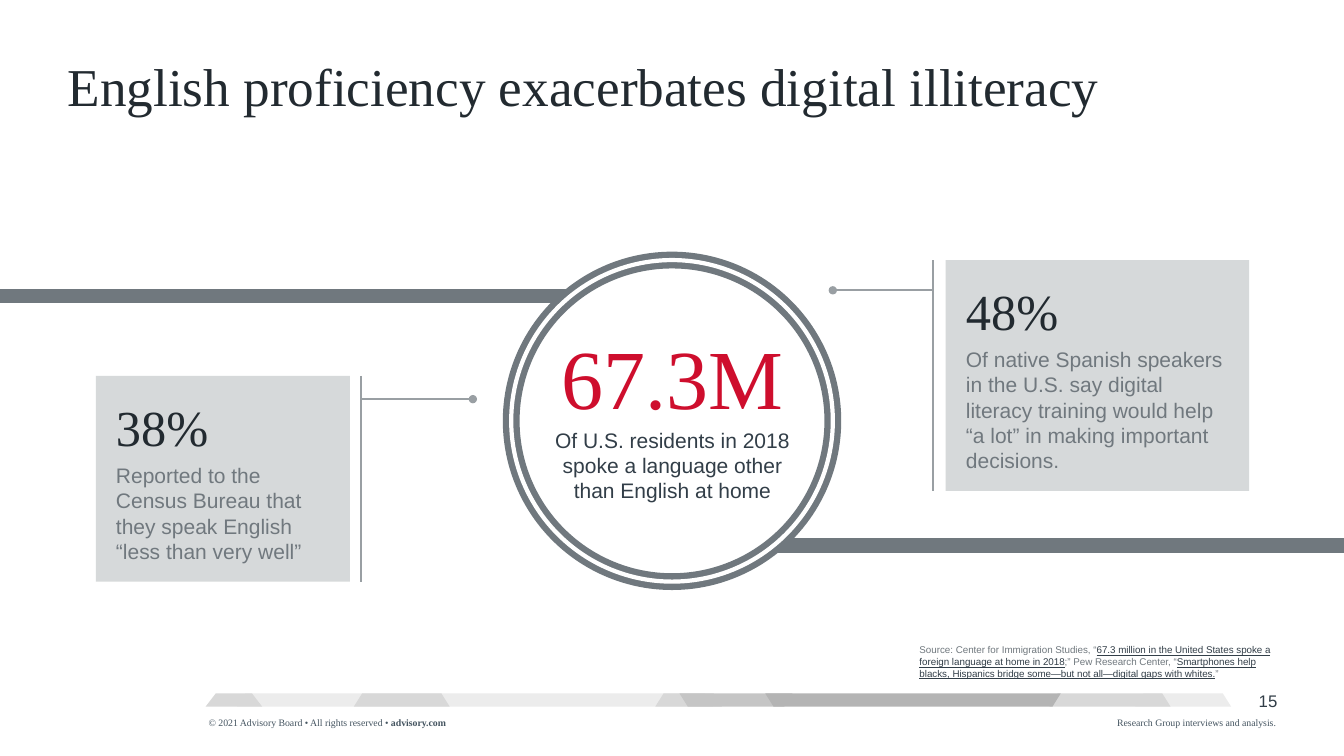
import lxml.etree
import pptx
import pptx.dml.color
import pptx.enum.shapes
import pptx.enum.text
import pptx.oxml.ns
import pptx.util

Inches = pptx.util.Inches
SHAPES = pptx.enum.shapes.MSO_SHAPE
ALIGN = pptx.enum.text.PP_ALIGN
ANCHOR = pptx.enum.text.MSO_ANCHOR
SERIF, SANS = "Times New Roman", "Arial"
INK, SLATE, GRAY = "222A30", "323E48", "70787E"
RULE, PANEL, RED, FOOTER = "999FA3", "D6D9DA", "CE0E2D", "445460"
SLIDE_WIDTH = 13.33


def color(hex_string):
    return pptx.dml.color.RGBColor.from_string(hex_string)


def style(font, size, name, hex_string):
    font.size = pptx.util.Pt(size)
    font.name = name
    font.color.rgb = color(hex_string)


def prepare_frame(shape, horizontal=0, top=0, bottom=0, anchor=ANCHOR.TOP):
    frame = shape.text_frame
    frame.word_wrap = True
    frame.auto_size = pptx.enum.text.MSO_AUTO_SIZE.NONE
    frame.vertical_anchor = anchor
    frame.margin_left = frame.margin_right = Inches(horizontal)
    frame.margin_top, frame.margin_bottom = Inches(top), Inches(bottom)
    return frame


def add_text(slide, box, text, size, name, hex_string, align=ALIGN.LEFT, anchor=ANCHOR.TOP):
    shape = slide.shapes.add_textbox(*map(Inches, box))
    paragraph = prepare_frame(shape, anchor=anchor).paragraphs[0]
    paragraph.text = text
    paragraph.alignment = align
    style(paragraph.font, size, name, hex_string)
    return paragraph


def add_shape(slide, kind, box, fill=None, line=None, width=0):
    shape = slide.shapes.add_shape(kind, *map(Inches, box))
    shape.shadow.inherit = False
    if fill:
        shape.fill.solid()
        shape.fill.fore_color.rgb = color(fill)
    else:
        shape.fill.background()
    if line:
        shape.line.color.rgb = color(line)
        shape.line.width = pptx.util.Pt(width)
    else:
        shape.line.fill.background()
    return shape


def add_line(slide, start, end, hex_string, width, dot=False):
    """Draw a straight line, with a round dot at its end if asked."""
    line = slide.shapes.add_connector(
        pptx.enum.shapes.MSO_CONNECTOR.STRAIGHT, *map(Inches, start + end))
    line.line.color.rgb = color(hex_string)
    line.line.width = pptx.util.Pt(width)
    properties = line.element.spPr
    if dot:
        outline = properties.find(pptx.oxml.ns.qn("a:ln"))
        lxml.etree.SubElement(outline, pptx.oxml.ns.qn("a:tailEnd"), type="oval")
    lxml.etree.SubElement(properties, pptx.oxml.ns.qn("a:effectLst"))


def add_title(slide, box):
    title = slide.shapes.title
    title.left, title.top, title.width, title.height = map(Inches, box)
    paragraph = prepare_frame(title).paragraphs[0]
    paragraph.text = "English proficiency exacerbates digital illiteracy"
    paragraph.alignment = ALIGN.LEFT
    paragraph.line_spacing = 0.9
    style(paragraph.font, 38, SERIF, INK)


def add_footer_band(slide, box):
    left, top, width, height = box
    trapezoids = [
        (0.31, 4.72, "ECECEC", 0), (4.46, 0.66, "D8D8D8", 0),
        (4.7, 1.12, "C5C5C5", 180), (1.47, 0.95, "D8D8D8", 0),
        (9.22, 0.95, "ECECEC", 0), (8.37, 1.2, "D8D8D8", 0),
        (5.55, 2.93, "B4B4B4", 180),
    ]
    for offset, length, fill, rotation in trapezoids:
        facet = add_shape(slide, SHAPES.TRAPEZOID, (left + offset, top, length, height), fill)
        facet.adjustments[0] = 0.63
        facet.rotation = rotation
    builder = slide.shapes.build_freeform(Inches(left), Inches(top + height))
    builder.add_line_segments([
        (Inches(left + x), Inches(top + y))
        for x, y in ((0.1, 0), (0.46, 0), (0.56, height))])
    first_facet = builder.convert_to_shape()
    first_facet.shadow.inherit = False
    first_facet.fill.solid()
    first_facet.fill.fore_color.rgb = color("D8D8D8")
    first_facet.line.fill.background()


def add_footer(slide, box):
    left, top, width, height = box
    notice = add_text(slide, (left, top, 3.26, height),
                      "© 2021 Advisory Board • All rights reserved • ", 7, SERIF, FOOTER)
    site = notice.add_run()
    site.text = "advisory.com"
    site.font.bold = True
    add_text(slide, (left + width - 1.59, top, 1.59, height),
             "Research Group interviews and analysis.", 7, SERIF, FOOTER)
    add_text(slide, (left + width - 0.5, top - 0.26, 0.5, 0.2),
             "15", 12, SANS, SLATE, ALIGN.RIGHT)


def add_ring(slide, box):
    """Draw the double ring, its side bars and the central figure."""
    left, top, width, height = box
    add_line(slide, (SLIDE_WIDTH, top + 2.83), (left + 2.58, top + 2.83), GRAY, 10.5)
    add_line(slide, (left + 0.62, top + 0.36), (0, top + 0.36), GRAY, 10)
    add_shape(slide, SHAPES.OVAL, box, line=GRAY, width=12)
    add_shape(slide, SHAPES.OVAL, box, line="FFFFFF", width=3)
    add_text(slide, (left + 0.5, top + 0.65, 2.24, 1.01), "67.3M", 60, SERIF, RED)
    add_text(slide, (left + 0.42, top + 1.66, 2.36, 0.76),
             "Of U.S. residents in 2018 spoke a language other than English at home",
             15, SANS, SLATE, ALIGN.CENTER)


def add_card(slide, box, figure, text, rule_x, dot_x, dot_drop):
    left, top, width, height = box
    add_line(slide, (rule_x, top), (rule_x, top + height), RULE, 1.5)
    add_line(slide, (rule_x, top + dot_drop), (dot_x, top + dot_drop), RULE, 1.5, dot=True)
    frame = prepare_frame(add_shape(slide, SHAPES.RECTANGLE, box, PANEL), 0.2, 0.2, 0.15)
    heading, body = frame.paragraphs[0], frame.add_paragraph()
    heading.text, body.text = figure, text
    heading.alignment = body.alignment = ALIGN.LEFT
    body.space_before = pptx.util.Pt(4.3)
    style(heading.font, 36, SERIF, INK)
    style(body.font, 15, SANS, GRAY)


def add_source(slide, box):
    paragraph = add_text(slide, box, "", 7, SANS, GRAY, anchor=ANCHOR.BOTTOM)
    pieces = [
        ("Source: Center for Immigration Studies, “", False),
        ("67.3 million in the United States spoke a foreign language at home in 2018", True),
        (";” Pew Research Center, “", False),
        ("Smartphones help blacks, Hispanics bridge some—but not all—digital gaps with whites.",
         True),
        ("”", False),
    ]
    for text, is_reference in pieces:
        run = paragraph.add_run()
        run.text = text
        if is_reference:
            run.font.underline = True
            run.font.color.rgb = color(SLATE)


def main():
    presentation = pptx.Presentation()
    presentation.slide_width = Inches(SLIDE_WIDTH)
    presentation.slide_height = Inches(7.5)
    slide = presentation.slides.add_slide(presentation.slide_layouts.get_by_name("Title Only"))
    add_footer(slide, (2.07, 7.11, 10.6, 0.12))
    add_footer_band(slide, (2.04, 6.88, 10.17, 0.13))
    add_title(slide, (0.67, 0.6, 11.99, 0.59))
    add_ring(slide, (5.07, 2.58, 3.19, 3.19))
    add_source(slide, (9.12, 6.39, 3.54, 0.35))
    add_card(slide, (0.95, 3.73, 2.52, 2.04), "38%",
             "Reported to the Census Bureau that they speak English “less than very well”",
             rule_x=3.58, dot_x=4.69, dot_drop=0.23)
    add_card(slide, (9.38, 2.58, 3.01, 2.29), "48%",
             "Of native Spanish speakers in the U.S. say digital literacy training "
             "would help “a lot” in making important decisions.",
             rule_x=9.25, dot_x=8.26, dot_drop=0.3)
    presentation.save("out.pptx")


if __name__ == "__main__":
    main()
